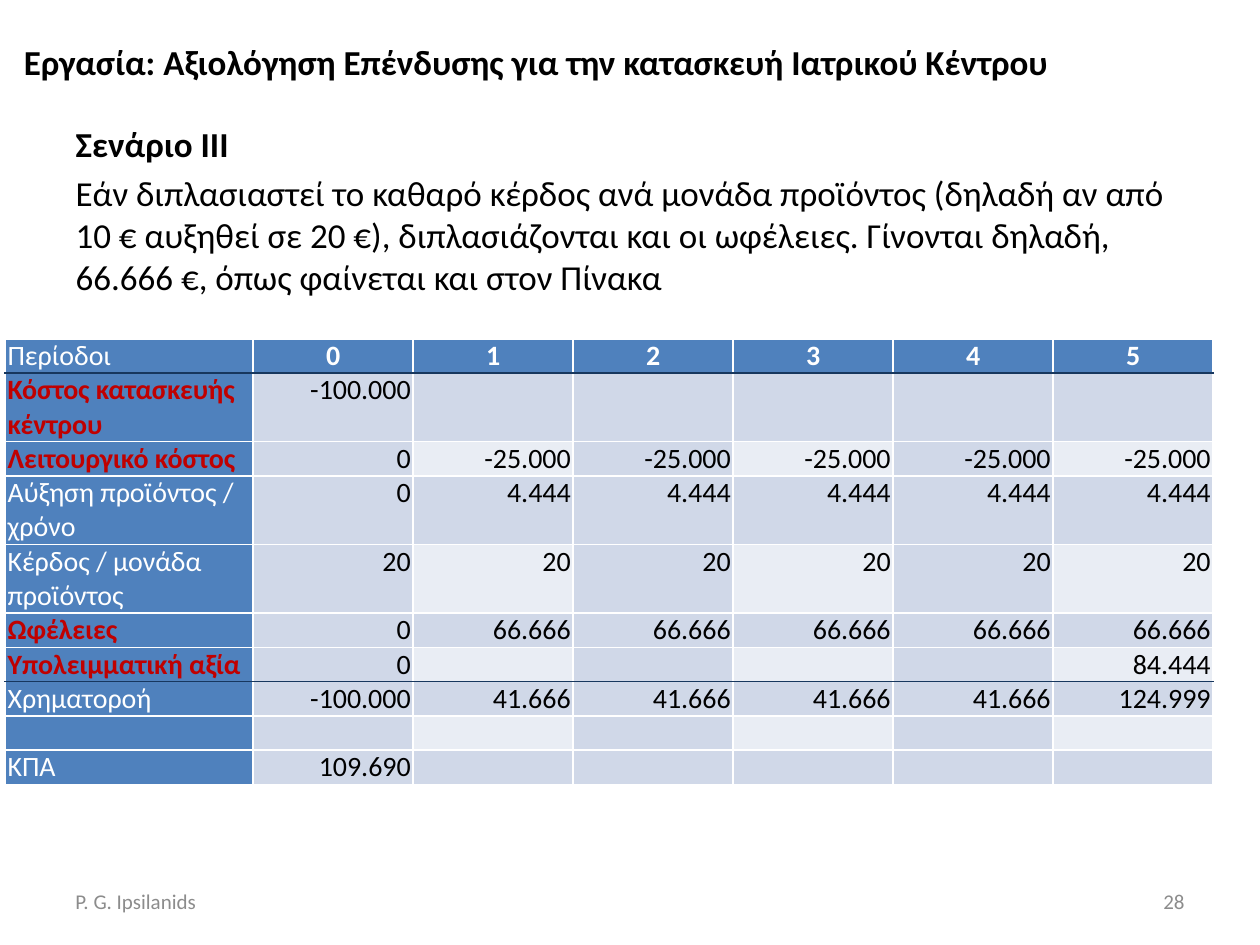
from lxml import etree
from pptx import Presentation
from pptx import util as u
from pptx.dml.color import RGBColor
from pptx.enum import text
from pptx.oxml import ns

BLACK, WHITE, GRAY, RED = "000000", "FFFFFF", "8C8C8C", "C00000"
BLUE, NAVY, BAND, LIGHT_BAND = "4F81BD", "17375E", "D0D8E8", "E9EDF4"


def style(paragraph, size, color, bold=False, alignment=text.PP_ALIGN.LEFT):
    paragraph.alignment = alignment
    for run in paragraph.runs:
        run.font.name = "Calibri"
        run.font.size = u.Pt(size)
        run.font.bold = bold
        run.font.color.rgb = RGBColor.from_string(color)


def add_border(cell, side, color):
    line = etree.SubElement(cell._tc.get_or_add_tcPr(), ns.qn(f"a:ln{side}"), w=str(u.Pt(1)))
    fill = etree.SubElement(line, ns.qn("a:solidFill"))
    etree.SubElement(fill, ns.qn("a:srgbClr"), val=color)


presentation = Presentation()
presentation.slide_width, presentation.slide_height = u.Inches(10), u.Inches(7.5)
slide = presentation.slides.add_slide(presentation.slide_layouts[1])

# Title
title = slide.shapes.title
title.left, title.top, title.width, title.height = map(u.Inches, (0.04, 0.3, 8.43, 0.38))
title.text_frame.text = "Εργασία: Αξιολόγηση Επένδυσης για την κατασκευή Ιατρικού Κέντρου"
title.text_frame.auto_size = text.MSO_AUTO_SIZE.NONE
title.text_frame.vertical_anchor = text.MSO_ANCHOR.MIDDLE
style(title.text_frame.paragraphs[0], 20, BLACK, True, text.PP_ALIGN.CENTER)

# Scenario
body = slide.placeholders[1]
body.left, body.top, body.width, body.height = map(u.Inches, (0.5, 0.92, 9, 1.57))
body.text_frame.text = (
    "Σενάριο ΙΙΙ\n"
    "Εάν διπλασιαστεί το καθαρό κέρδος ανά μονάδα προϊόντος (δηλαδή αν από 10 € αυξηθεί σε 20 €), "
    "διπλασιάζονται και οι ωφέλειες. Γίνονται δηλαδή, 66.666 €, όπως φαίνεται και στον Πίνακα"
)
body.text_frame.auto_size = text.MSO_AUTO_SIZE.NONE
for index, paragraph in enumerate(body.text_frame.paragraphs):
    properties = paragraph._p.get_or_add_pPr()
    properties.set("marL", "0")
    properties.set("indent", "0")
    etree.SubElement(properties, ns.qn("a:buNone"))
    paragraph.space_before = u.Pt(4 * index)
    style(paragraph, 20, BLACK, bold=index == 0)

# Cash flow table
rows = [
    ["Περίοδοι", *"012345"],
    ["Κόστος κατασκευής κέντρου", "-100.000"] + [""] * 5,
    ["Λειτουργικό κόστος", "0"] + ["-25.000"] * 5,
    ["Αύξηση προϊόντος / χρόνο", "0"] + ["4.444"] * 5,
    ["Κέρδος / μονάδα προϊόντος"] + ["20"] * 6,
    ["Ωφέλειες", "0"] + ["66.666"] * 5,
    ["Υπολειμματική αξία", "0"] + [""] * 4 + ["84.444"],
    ["Χρηματοροή", "-100.000"] + ["41.666"] * 4 + ["124.999"],
    [""] * 7,
    ["ΚΠΑ", "109.690"] + [""] * 5,
]
red_rows = {1, 2, 5, 6}
two_line_rows = {1, 3, 4}
ruled_rows = {0, 6}
row_height = 0.27

table = slide.shapes.add_table(
    len(rows), len(rows[0]), u.Inches(0.04), u.Inches(2.69), u.Inches(9.61), u.Inches(3.51)
).table
for index, column in enumerate(table.columns):
    column.width = u.Inches(1.97 if index == 0 else 1.27)

for r, row in enumerate(rows):
    table.rows[r].height = u.Inches(row_height * (2 if r in two_line_rows else 1))
    for c, value in enumerate(row):
        cell = table.cell(r, c)
        cell.margin_left = cell.margin_right = u.Inches(0.02)
        cell.margin_top = cell.margin_bottom = 0
        add_border(cell, "L", WHITE)
        add_border(cell, "R", WHITE)
        add_border(cell, "T", NAVY if r - 1 in ruled_rows else WHITE)
        add_border(cell, "B", NAVY if r in ruled_rows else WHITE)
        cell.fill.solid()
        light = r % 2 == 0 and c % 2 == 0
        fill = BLUE if r == 0 or c == 0 else LIGHT_BAND if light else BAND
        cell.fill.fore_color.rgb = RGBColor.from_string(fill)

        cell.text_frame.text = value
        paragraph = cell.text_frame.paragraphs[0]
        if c == 0:
            style(paragraph, 16, RED if r in red_rows else WHITE, r in red_rows)
        elif r == 0:
            style(paragraph, 16, WHITE, True, text.PP_ALIGN.CENTER)
        else:
            style(paragraph, 16, BLACK, False, text.PP_ALIGN.RIGHT)
        if not value:
            etree.SubElement(paragraph._p, ns.qn("a:endParaRPr"), sz="1600")

# Footer
for left, label, alignment in (
    (0.5, "P. G. Ipsilanids", text.PP_ALIGN.LEFT),
    (7.17, "28", text.PP_ALIGN.RIGHT),
):
    footer = slide.shapes.add_textbox(*map(u.Inches, (left, 6.95, 2.33, 0.4)))
    footer.text_frame.text = label
    footer.text_frame.word_wrap = True
    footer.text_frame.vertical_anchor = text.MSO_ANCHOR.MIDDLE
    style(footer.text_frame.paragraphs[0], 12, GRAY, alignment=alignment)

presentation.save("out.pptx")
